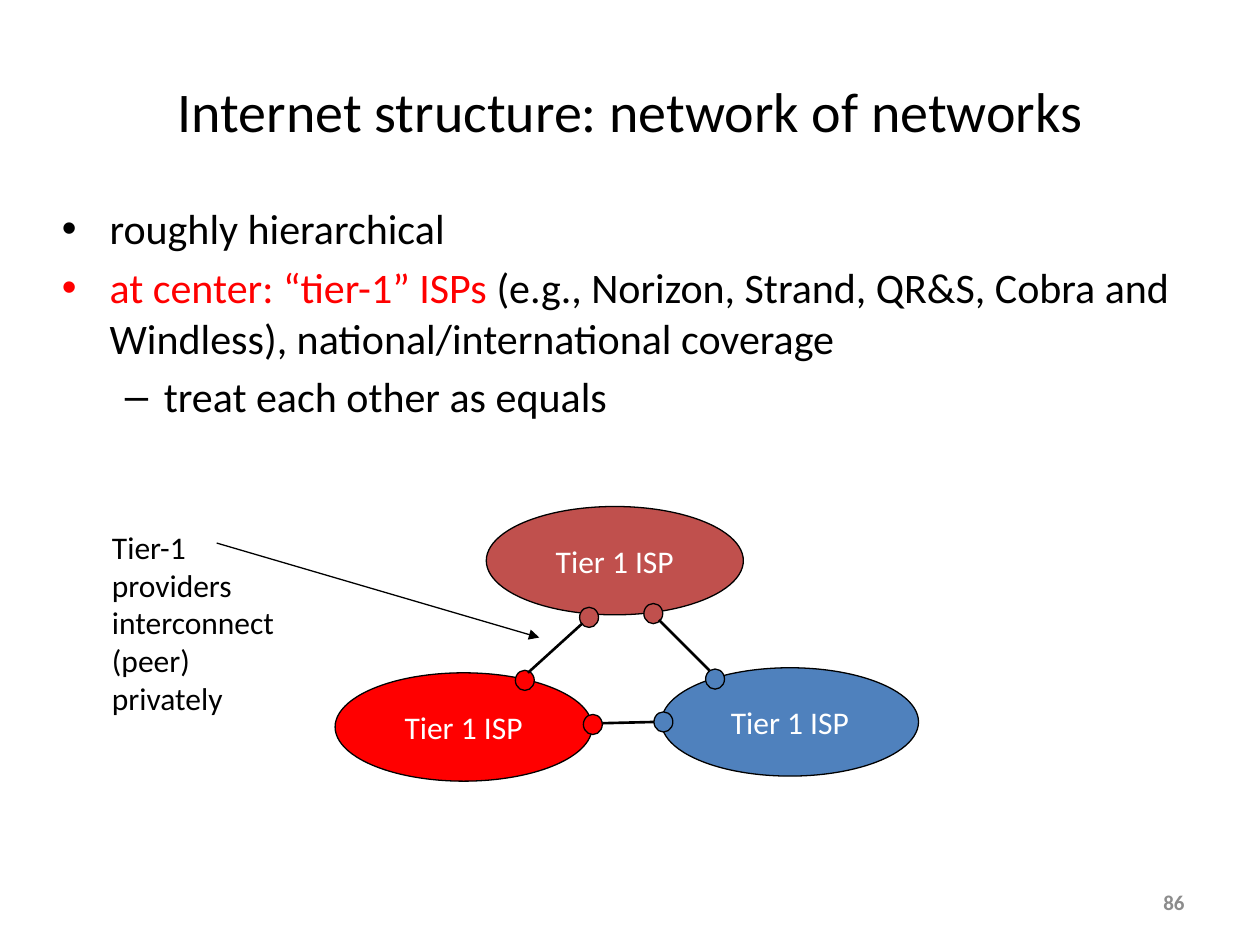
from dataclasses import dataclass
from lxml.etree import SubElement
from pptx import Presentation
from pptx.dml.color import RGBColor
from pptx.enum.shapes import MSO_CONNECTOR as Connector, MSO_SHAPE as Shape
from pptx.enum.text import MSO_ANCHOR as Anchor, MSO_AUTO_SIZE as AutoSize, PP_ALIGN as Align
from pptx.oxml.ns import qn
from pptx.util import Inches, Pt


@dataclass(frozen=True)
class Theme:
    font: str = "Calibri"
    black: str = "000000"
    white: str = "FFFFFF"
    gray: str = "8C8C8C"
    red: str = "FF0000"
    brick: str = "C0504D"
    blue: str = "4F81BD"
    title: int = 32
    body: int = 24
    label: int = 18
    number: int = 12
    thin: float = 0.75
    thick: float = 1.5


THEME = Theme()

TITLE = "Internet structure: network of networks"
BULLETS = [
    (0, [("roughly hierarchical", THEME.black)]),
    (0, [("at center: “tier-1” ISPs ", THEME.red),
         ("(e.g., Norizon, Strand, QR&S, Cobra and Windless), "
          "national/international coverage", THEME.black)]),
    (1, [("treat each other as equals", THEME.black)]),
]
INDENTS = [(0.38, -0.38), (0.81, -0.31)]
PROVIDER = "Tier 1 ISP"
PROVIDERS = [
    (2.66, 5.34, THEME.red),
    (3.86, 4.02, THEME.brick),
    (5.25, 5.3, THEME.blue),
]
PEERING_POINTS = [
    (5.6, 5.31, THEME.blue),
    (5.11, 4.79, THEME.brick),
    (4.6, 4.82, THEME.brick),
    (4.09, 5.32, THEME.red),
    (4.63, 5.67, THEME.red),
    (5.19, 5.65, THEME.blue),
]
PEER_LINKS = [
    ((4.78, 5.74), (5.19, 5.73)),
    ((5.23, 4.92), (5.63, 5.32)),
    ((4.19, 5.34), (4.62, 4.95)),
]
NOTE = "Tier-1 providers interconnect (peer) privately"
NOTE_ARROW = ((1.72, 4.31), (4.28, 5.06))
PAGE_NUMBER = "86"
PROVIDER_SIZE = (2.04, 0.86)
POINT_SIZE = (0.15, 0.16)


def color(code):
    return RGBColor.from_string(code)


def place(shape, left, top, width, height):
    shape.left, shape.top = Inches(left), Inches(top)
    shape.width, shape.height = Inches(width), Inches(height)


def add_run(para, text, size, code, bold=False):
    span = para.add_run()
    span.text = text
    span.font.name = THEME.font
    span.font.size = Pt(size)
    span.font.bold = bold
    span.font.color.rgb = color(code)


def add_ellipse(page, left, top, size, code):
    ellipse = page.shapes.add_shape(Shape.OVAL, *map(Inches, (left, top, *size)))
    ellipse.shadow.inherit = False
    ellipse.fill.solid()
    ellipse.fill.fore_color.rgb = color(code)
    ellipse.line.color.rgb = color(THEME.black)
    ellipse.line.width = Pt(THEME.thin)
    return ellipse


def add_line(page, start, end, width, arrow=False):
    line = page.shapes.add_connector(Connector.STRAIGHT, *map(Inches, (*start, *end)))
    line.line.color.rgb = color(THEME.black)
    line.line.width = Pt(width)
    if arrow:
        SubElement(line.line._get_or_add_ln(), qn("a:tailEnd"), type="triangle")
    SubElement(line._element.spPr, qn("a:effectLst"))


def add_text(page, bounds, text, size, code, align, bold=False):
    box = page.shapes.add_textbox(*map(Inches, bounds))
    box.text_frame.word_wrap = True
    para = box.text_frame.paragraphs[0]
    para.alignment = align
    add_run(para, text, size, code, bold)
    return box


def fill_placeholders(page):
    title, body = page.shapes.title, page.placeholders[1]
    place(title, 0.58, 0.25, 8.85, 1.25)
    title.text_frame.auto_size = AutoSize.NONE
    title.text_frame.vertical_anchor = Anchor.MIDDLE
    add_run(title.text_frame.paragraphs[0], TITLE, THEME.title, THEME.black)

    place(body, 0.39, 1.56, 9.23, 5.08)
    frame = body.text_frame
    frame.auto_size = AutoSize.NONE
    for index, (level, runs) in enumerate(BULLETS):
        para = frame.add_paragraph() if index else frame.paragraphs[0]
        para.level = level
        margin, indent = INDENTS[level]
        properties = para._p.get_or_add_pPr()
        properties.set("marL", str(Inches(margin)))
        properties.set("indent", str(Inches(indent)))
        for text, code in runs:
            add_run(para, text, THEME.body, code)


def draw_network(page):
    for left, top, code in PROVIDERS:
        frame = add_ellipse(page, left, top, PROVIDER_SIZE, code).text_frame
        frame.word_wrap = False
        frame.vertical_anchor = Anchor.MIDDLE
        para = frame.paragraphs[0]
        para.alignment = Align.CENTER
        add_run(para, PROVIDER, THEME.label, THEME.white)
    for left, top, code in PEERING_POINTS:
        add_ellipse(page, left, top, POINT_SIZE, code)
    for start, end in PEER_LINKS:
        add_line(page, start, end, THEME.thick)


def main():
    deck = Presentation()
    deck.slide_width, deck.slide_height = Inches(10), Inches(7.5)
    page = deck.slides.add_slide(deck.slide_layouts[1])
    fill_placeholders(page)
    draw_network(page)
    add_text(page, (0.79, 4.14, 1.71, 1.6), NOTE, THEME.label, THEME.black, Align.LEFT)
    add_line(page, *NOTE_ARROW, THEME.thin, arrow=True)
    number = add_text(page, (7.17, 6.96, 2.33, 0.4), PAGE_NUMBER,
                      THEME.number, THEME.gray, Align.RIGHT, bold=True)
    number.text_frame.vertical_anchor = Anchor.MIDDLE
    deck.save("out.pptx")


if __name__ == "__main__":
    main()
